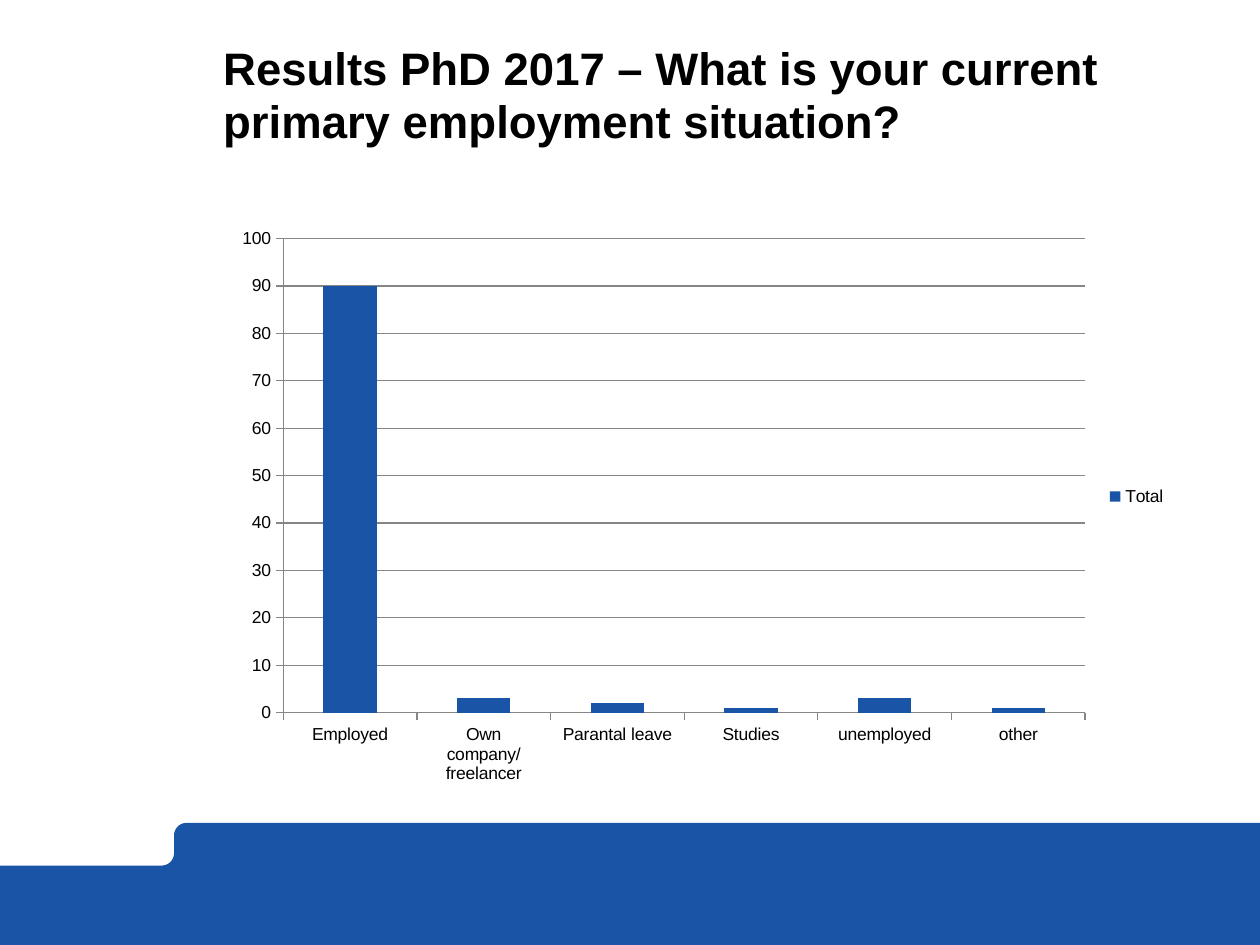
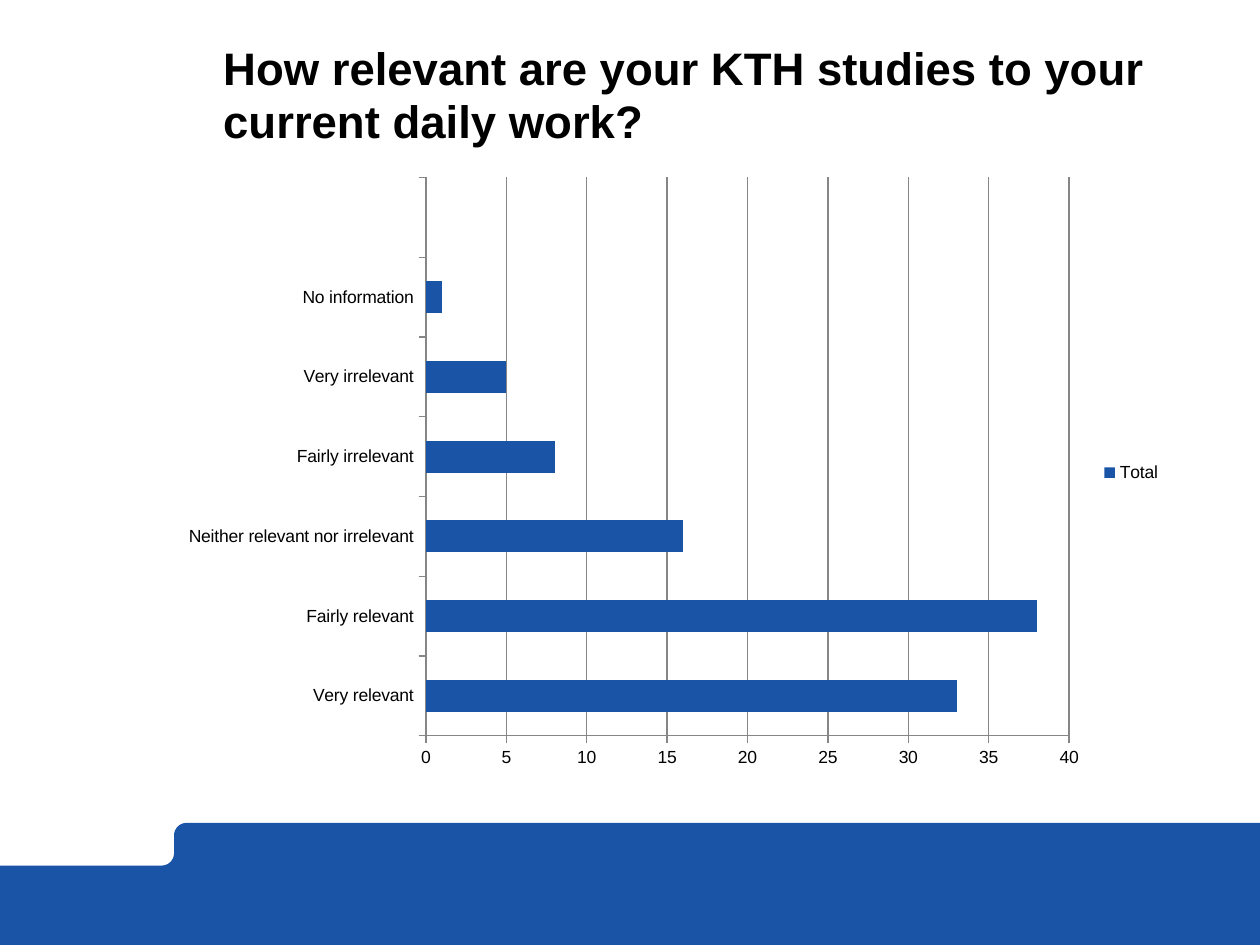
from math import cos, radians, sin

from pptx import Presentation
from pptx.chart.data import CategoryChartData
from pptx.dml.color import RGBColor
from pptx.enum.chart import XL_CHART_TYPE, XL_LEGEND_POSITION, XL_TICK_MARK
from pptx.enum.text import MSO_ANCHOR
from pptx.util import Cm, Pt

COLUMNS = XL_CHART_TYPE.COLUMN_CLUSTERED
BARS = XL_CHART_TYPE.BAR_CLUSTERED
LEGEND_RIGHT = XL_LEGEND_POSITION.RIGHT
TICK_OUTSIDE = XL_TICK_MARK.OUTSIDE
BOTTOM = MSO_ANCHOR.BOTTOM

WIDTH, HEIGHT = 25.4, 19.05
FONT = "Arial"
BLUE, BLACK, GREY = "1954A6", "000000", "868686"

EMPLOYMENT = {
    "Employed": 90,
    "Own company/freelancer": 3,
    "Parantal leave": 2,
    "Studies": 1,
    "unemployed": 3,
    "other": 1,
}
RELEVANCE = {
    "Very relevant": 33,
    "Fairly relevant": 38,
    "Neither relevant nor irrelevant": 16,
    "Fairly irrelevant": 8,
    "Very irrelevant": 5,
    "No information": 1,
    "": None,
}


def color(value):
    """Turn a hex string into a colour."""
    return RGBColor.from_string(value)


def style_font(font, size, fill=BLACK, bold=False):
    """Apply the deck's typeface with a size, colour and weight."""
    font.name, font.size, font.bold = FONT, Pt(size), bold
    font.color.rgb = color(fill)


def write(box, text, size=10, fill=BLACK, bold=False, spacing=None):
    """Put formatted text into a box."""
    para = box.text_frame.paragraphs[0]
    if spacing:
        para.line_spacing = Pt(spacing)
    span = para.add_run()
    span.text = text
    style_font(span.font, size, fill, bold)


def arc(x, y, radius, start, end, steps=10):
    """List points along an arc, with angles in degrees clockwise from the right."""
    angles = [radians(start + (end - start) * step / steps) for step in range(steps + 1)]
    return [(Cm(x + radius * cos(angle)), Cm(y + radius * sin(angle))) for angle in angles]


class SurveyDeck:
    """Holds the shared style and the current slide."""

    def __init__(self):
        """Start an empty deck."""
        self.deck = Presentation()
        self.deck.slide_width, self.deck.slide_height = Cm(WIDTH), Cm(HEIGHT)
        self.page = None

    def add_page(self, title):
        """Add a page with its band and title."""
        self.page = self.deck.slides.add_slide(self.deck.slide_layouts[6])
        self.add_band()
        self.add_title(title)

    def add_band(self, top=16.59, step_top=17.45, step_left=3.51, radius=0.25):
        """Draw the stepped footer band with its two rounded corners."""
        corners = [(0, HEIGHT), (0, step_top)]
        points = [(Cm(x), Cm(y)) for x, y in corners]
        points += arc(step_left - radius, step_top - radius, radius, 90, 0)
        points += arc(step_left + radius, top + radius, radius, 180, 270)
        points += [(Cm(WIDTH), Cm(top)), (Cm(WIDTH), Cm(HEIGHT))]
        builder = self.page.shapes.build_freeform(*points[0])
        builder.add_line_segments(points[1:], close=True)
        band = builder.convert_to_shape()
        band.shadow.inherit = False
        band.fill.solid()
        band.fill.fore_color.rgb = color(BLUE)
        band.line.fill.background()

    def add_title(self, text):
        """Write the page title, resting on the bottom of its box."""
        box = self.page.shapes.add_textbox(Cm(4.5), Cm(1.12), Cm(19.28), Cm(1.85))
        frame = box.text_frame
        frame.word_wrap, frame.vertical_anchor = True, BOTTOM
        frame.margin_left = frame.margin_top = frame.margin_right = frame.margin_bottom = 0
        write(box, text, size=26, bold=True, spacing=30)

    def add_survey_chart(self, kind, answers, left, top, width, height, maximum, unit):
        """Chart the answers of one survey question."""
        data = CategoryChartData()
        data.categories = list(answers)
        data.add_series("Total", list(answers.values()))
        chart = self.page.shapes.add_chart(
            kind, Cm(left), Cm(top), Cm(width), Cm(height), data
        ).chart
        style_font(chart.font, 10)
        chart.has_title = False
        chart.has_legend = True
        chart.legend.position = LEGEND_RIGHT
        chart.legend.include_in_layout = False
        plot = chart.plots[0]
        plot.gap_width, plot.vary_by_categories = 150, False
        fill = plot.series[0].format.fill
        fill.solid()
        fill.fore_color.rgb = color(BLUE)
        values = chart.value_axis
        values.minimum_scale, values.maximum_scale, values.major_unit = 0, maximum, unit
        values.has_major_gridlines = True
        for axis in (chart.category_axis, values):
            axis.major_tick_mark = TICK_OUTSIDE
            self.style_line(axis.format.line)
        self.style_line(values.major_gridlines.format.line)

    def style_line(self, line):
        """Give a chart line its thin grey stroke."""
        line.color.rgb, line.width = color(GREY), Pt(0.75)


def main():
    """Build and save the survey results."""
    survey = SurveyDeck()
    survey.add_page("Results PhD 2017 – What is your current primary employment situation?")
    survey.add_survey_chart(COLUMNS, EMPLOYMENT, 4.5, 4.39, 19.28, 11.33, maximum=100, unit=10)
    survey.add_page("How relevant are your KTH studies to your current daily work?")
    survey.add_survey_chart(BARS, RELEVANCE, 3.4, 3.33, 20.27, 12.4, maximum=40, unit=5)
    survey.deck.save("out.pptx")


if __name__ == "__main__":
    main()
